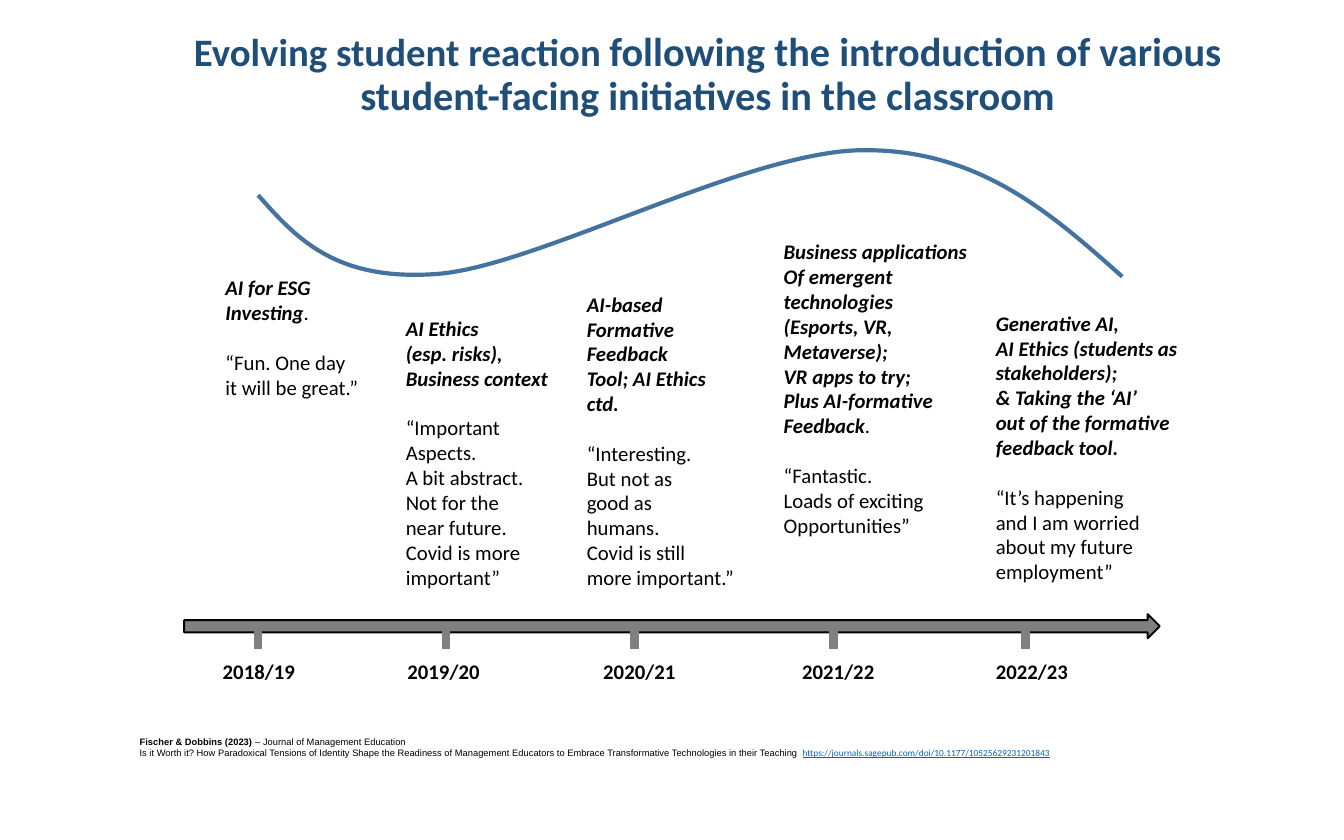
from collections import namedtuple
from lxml import etree
from pptx import Presentation, util as u
from pptx.dml.color import RGBColor
from pptx.enum import shapes, text
from pptx.oxml import ns

NAVY = RGBColor(0x1F, 0x4E, 0x79)
BLUE = RGBColor(0x43, 0x73, 0x9E)
LINK = RGBColor(0x05, 0x63, 0xC1)
GREY = RGBColor(0x80, 0x80, 0x80)
BLACK = RGBColor(0, 0, 0)

Box = namedtuple("Box", "left top width height")
Period = namedtuple("Period", "year year_left tick heading quote note_left note_top")

PERIODS = [
    Period("2018/19", 0.73, 1.4,
           ["AI for ESG", [("Investing", {}), (".", {"bold": False, "italic": False})]],
           ["“Fun. One day", "it will be great.”"], 4.26, 5.2),
    Period("2019/20", 4.22, 4.95,
           ["AI Ethics", "(esp. risks),", "Business context"],
           ["“Important", "Aspects.", "A bit abstract.", "Not for the", "near future.",
            "Covid is more", "important”"], 7.67, 5.97),
    Period("2020/21", 7.92, 8.51,
           ["AI-based", "Formative", "Feedback", "Tool; AI Ethics", "ctd."],
           ["“Interesting.", "But not as", "good as", "humans.", "Covid is still",
            "more important.”"], 11.09, 5.51),
    Period("2021/22", 11.68, 12.27,
           ["Business applications", "Of emergent", "technologies", "(Esports, VR,",
            "Metaverse);", "VR apps to try;", "Plus AI-formative",
            [("Feedback", {}), (".", {"bold": False, "italic": False})]],
           ["“Fantastic.", "Loads of exciting", "Opportunities”"], 14.81, 4.52),
    Period("2022/23", 15.34, 15.9,
           ["Generative AI,", "AI Ethics (students as", "stakeholders);",
            "& Taking the ‘AI’", "out of the formative", "feedback tool."],
           ["“It’s happening", "and I am worried", "about my future", "employment”"],
           18.82, 5.87),
]
CURVE = [(0, 0.85), (0.73, 1.68), (1.47, 2.48), (3.38, 2.34), (5.28, 2.2),
         (9.29, -0.02), (11.48, 0), (13.64, 0), (14.99, 1.2), (16.33, 2.39)]


def add_lines(frame, lines, size=11.1, name="Calibri", color=BLACK, bold=False,
              italic=False, align=text.PP_ALIGN.LEFT, spacing=None, before=0):
    """Append lines, each a string or a list of (words, overrides) runs."""
    for index, line in enumerate(lines):
        fresh = len(frame.paragraphs) == 1 and not frame.paragraphs[0].runs
        paragraph = frame.paragraphs[0] if fresh else frame.add_paragraph()
        paragraph.alignment = align
        if spacing:
            paragraph.line_spacing = spacing
        if index == 0 and before:
            paragraph.space_before = u.Pt(before)
        for words, changes in [(line, {})] if isinstance(line, str) else line:
            look = dict(size=size, name=name, color=color, bold=bold,
                        italic=italic, underline=None) | changes
            run = paragraph.add_run()
            run.text = words
            run.font.size = u.Pt(look["size"])
            run.font.name = look["name"]
            run.font.color.rgb = look["color"]
            run.font.bold = look["bold"]
            run.font.italic = look["italic"]
            run.font.underline = look["underline"]


def add_frame(slide, box, inset=True):
    """Add an empty wrapping text box and return its text frame."""
    frame = slide.shapes.add_textbox(*map(u.Cm, box)).text_frame
    frame.word_wrap = True
    if not inset:
        frame.margin_left = frame.margin_right = frame.margin_top = frame.margin_bottom = 0
    return frame


def add_title(slide, box):
    """Place the centred headline."""
    frame = add_frame(slide, box)
    frame.vertical_anchor = text.MSO_ANCHOR.MIDDLE
    headline = [("Evolving student reaction ", {"size": 20.8}),
                ("following the introduction of various student-facing initiatives "
                 "in the classroom", {})]
    add_lines(frame, [headline], size=21.6, color=NAVY, bold=True,
              align=text.PP_ALIGN.CENTER, spacing=0.9)


def add_mood_curve(slide, box):
    """Draw the reaction curve as cubic Bezier segments."""
    points = [(u.Cm(box.left + x), u.Cm(box.top + y)) for x, y in CURVE]
    builder = slide.shapes.build_freeform(*points[0], scale=1.0)
    builder.add_line_segments(points[1:], close=False)
    curve = builder.convert_to_shape()
    curve.shadow.inherit = False
    curve.fill.background()
    curve.line.color.rgb = BLUE
    curve.line.width = u.Pt(2.25)
    steps = list(curve._element.iter(ns.qn("a:lnTo")))
    for start in range(0, len(steps), 3):
        bezier = etree.Element(ns.qn("a:cubicBezTo"))
        steps[start].addprevious(bezier)
        for step in steps[start:start + 3]:
            bezier.append(step[0])
            step.getparent().remove(step)


def add_timeline(slide, box):
    """Place the arrow with a tick and a year for each period."""
    arrow = slide.shapes.add_shape(shapes.MSO_SHAPE.RIGHT_ARROW, *map(u.Cm, box))
    arrow.shadow.inherit = False
    arrow.fill.solid()
    arrow.fill.fore_color.rgb = GREY
    arrow.line.color.rgb = BLACK
    arrow.line.width = u.Pt(1)
    for period in PERIODS:
        x = u.Cm(box.left + period.tick)
        tick = slide.shapes.add_connector(
            shapes.MSO_CONNECTOR.STRAIGHT, x, u.Cm(box.top + 0.23), x, u.Cm(box.top + 0.66))
        tick.line.color.rgb = GREY
        tick.line.width = u.Pt(4.5)
        etree.SubElement(tick._element.spPr, ns.qn("a:effectLst"))
        year_box = Box(box.left + period.year_left, box.top + 0.85, 1.6, 0.76)
        add_lines(add_frame(slide, year_box, inset=False), [period.year], bold=True)


def add_note(slide, box, period):
    """Place the initiative of a period above the students' quote."""
    frame = add_frame(slide, box, inset=False)
    add_lines(frame, period.heading, bold=True, italic=True)
    add_lines(frame, period.quote, before=13.3)


def add_source(slide, box):
    """Place the reference at the foot."""
    reference = [
        [("Fischer & Dobbins (2023) ", {"bold": True}),
         ("– Journal of Management Education", {})],
        [("Is it Worth it? How Paradoxical Tensions of Identity Shape the Readiness of "
          "Management Educators to Embrace Transformative Technologies in their Teaching ", {}),
         ("https://journals.sagepub.com/doi/10.1177/10525629231201843",
          {"name": "Calibri", "color": LINK, "underline": True})],
    ]
    add_lines(add_frame(slide, box), reference, size=5, name="Arial")


def main():
    """Build and save the slide."""
    deck = Presentation()
    deck.slide_width, deck.slide_height = u.Cm(25.4), u.Cm(15.88)
    slide = deck.slides.add_slide(deck.slide_layouts[6])
    add_title(slide, Box(3.08, 0.37, 20.6, 2.11))
    add_mood_curve(slide, Box(4.88, 2.84, 16.33, 2.41))
    add_timeline(slide, Box(3.48, 11.61, 18.44, 0.46))
    for period in PERIODS:
        add_note(slide, Box(period.note_left, period.note_top, 3.6, 1.5), period)
    add_source(slide, Box(2.39, 13.79, 22.33, 0.76))
    deck.save("out.pptx")


if __name__ == "__main__":
    main()
